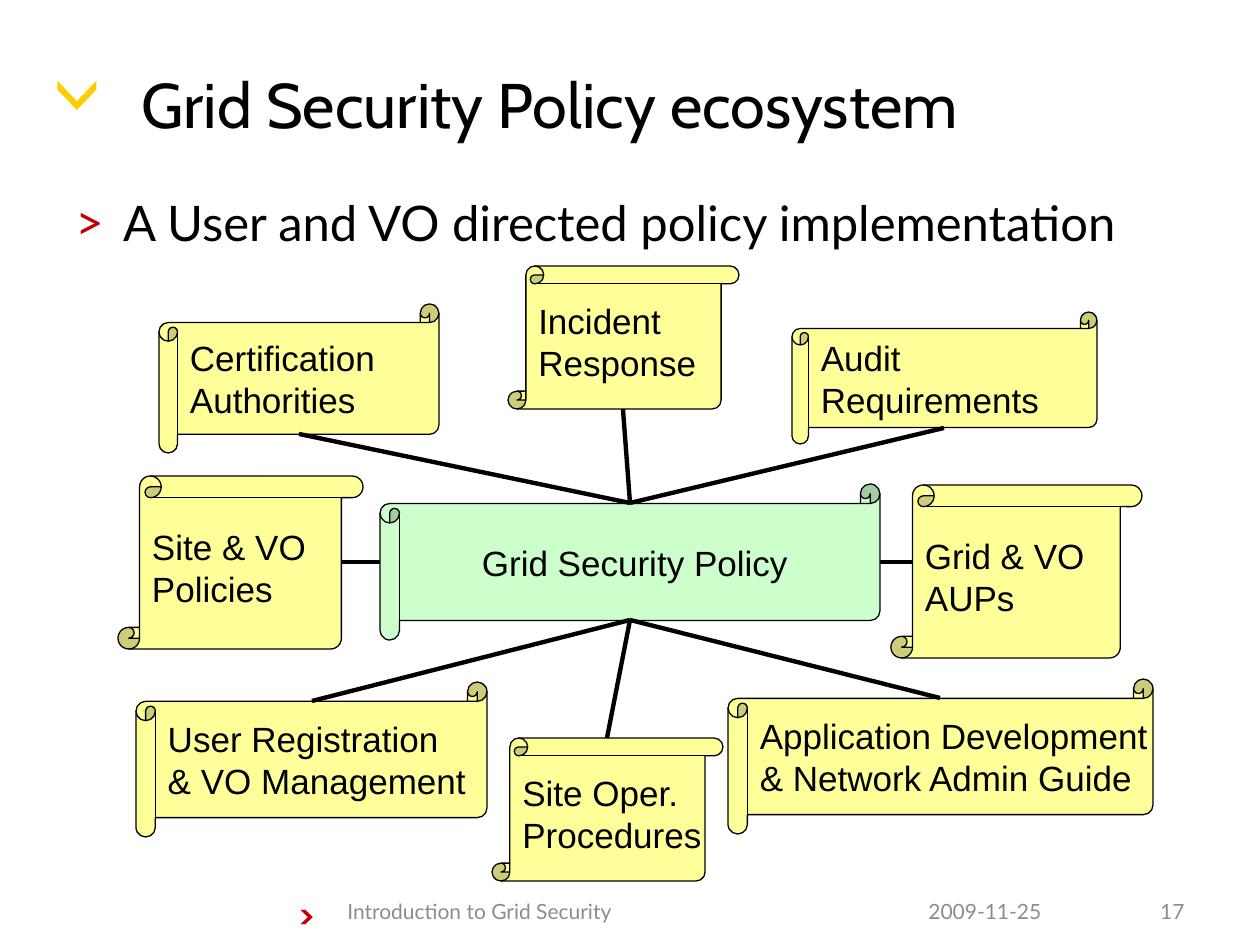
from lxml import etree
from pptx import Presentation
from pptx import util as u
from pptx.dml.color import RGBColor
from pptx.enum import shapes, text
from pptx.oxml import ns

PX = u.Inches(1) / 126
BLACK = RGBColor(0x00, 0x00, 0x00)
RED = RGBColor(0xC0, 0x00, 0x00)
GOLD = RGBColor(0xFF, 0xCC, 0x00)
GREY = RGBColor(0x8C, 0x8C, 0x8C)
GREEN = RGBColor(0xCC, 0xFF, 0xCC)
YELLOW = RGBColor(0xFF, 0xFF, 0x99)
LEFT, CENTER, RIGHT = text.PP_ALIGN.LEFT, text.PP_ALIGN.CENTER, text.PP_ALIGN.RIGHT
TOP, MIDDLE = text.MSO_ANCHOR.TOP, text.MSO_ANCHOR.MIDDLE
HORIZONTAL = shapes.MSO_SHAPE.HORIZONTAL_SCROLL
VERTICAL = shapes.MSO_SHAPE.VERTICAL_SCROLL


def emu(*lengths):
    return [u.Emu(round(length * PX)) for length in lengths]


def write(shape, words, size=20, font="Arial", color=BLACK, bold=False,
          align=LEFT, anchor=MIDDLE, wrap=True, bullet=None):
    frame = shape.text_frame
    frame.text = words
    frame.word_wrap = wrap
    frame.vertical_anchor = anchor
    for paragraph in frame.paragraphs:
        paragraph.alignment = align
        if bullet:
            properties = paragraph._p.get_or_add_pPr()
            properties.set("marL", str(u.Inches(0.38)))
            properties.set("indent", str(-u.Inches(0.38)))
            bullet_color = etree.SubElement(properties, ns.qn("a:buClr"))
            etree.SubElement(bullet_color, ns.qn("a:srgbClr"), val=str(RED))
            etree.SubElement(properties, ns.qn("a:buFont"), typeface=font)
            etree.SubElement(properties, ns.qn("a:buChar"), char=bullet)
        for run in paragraph.runs:
            run.font.size = u.Pt(size)
            run.font.name = font
            run.font.bold = bold
            run.font.color.rgb = color


presentation = Presentation()
presentation.slide_width, presentation.slide_height = emu(1260, 945)
slide = presentation.slides.add_slide(presentation.slide_layouts[5])

# Title
title = slide.shapes.title
title.left, title.top, title.width, title.height = emu(129, 48, 1068, 110)
write(title, "Grid Security Policy ecosystem", size=36, font="Cabin")

# Chevrons beside the title and the footer
chevron = slide.shapes.add_textbox(*emu(58, 29, 59, 127))
chevron.rotation = 90
write(chevron, ">", size=54, font="Cabin", color=GOLD, anchor=TOP)
chevron = slide.shapes.add_textbox(*emu(286, 886, 59, 55))
write(chevron, ">", font="Cabin", color=RED, bold=True, anchor=TOP)

# Bullet line
body = slide.shapes.add_textbox(*emu(63, 186, 1134, 658))
write(body, "A User and VO directed policy implementation",
      size=28, font="Lato", anchor=TOP, bullet=">")

# Footer
for words, left, width, align in [
    ("Introduction to Grid Security", 335, 452, LEFT),
    ("2009-11-25", 916, 147, LEFT),
    ("17", 1131, 66, RIGHT),
]:
    footer = slide.shapes.add_textbox(*emu(left, 896, width, 30))
    write(footer, words, size=12, font="Lato", color=GREY, align=align)

# Scrolls: the central policy and the policies around it
for words, kind, box, fill, align in [
    ("Grid Security Policy", HORIZONTAL, (380, 484, 500, 156), GREEN, CENTER),
    ("Site & VO\nPolicies", VERTICAL, (118, 476, 245, 173), YELLOW, LEFT),
    ("Certification\nAuthorities", HORIZONTAL, (159, 304, 280, 149), YELLOW, LEFT),
    ("Audit\nRequirements", HORIZONTAL, (792, 312, 305, 132), YELLOW, LEFT),
    ("Incident\nResponse", VERTICAL, (508, 266, 231, 143), YELLOW, LEFT),
    ("User Registration\n& VO Management", HORIZONTAL, (136, 682, 351, 155), YELLOW, LEFT),
    ("Application Development\n& Network Admin Guide", HORIZONTAL,
     (728, 679, 425, 155), YELLOW, LEFT),
    ("Grid & VO\nAUPs", VERTICAL, (891, 485, 251, 173), YELLOW, LEFT),
    ("Site Oper.\nProcedures", VERTICAL, (492, 738, 231, 143), YELLOW, LEFT),
]:
    scroll = slide.shapes.add_shape(kind, *emu(*box))
    scroll.shadow.inherit = False
    scroll.fill.solid()
    scroll.fill.fore_color.rgb = fill
    scroll.line.color.rgb = BLACK
    scroll.line.width = u.Pt(0.75)
    write(scroll, words, align=align, wrap=False)

# Lines from the edges of the central policy to the other scrolls
policy_top, policy_bottom = (630, 503), (630, 620)
policy_left, policy_right = (380, 562), (880, 562)
for start, end in [
    (policy_left, (341, 562)),
    (policy_top, (299, 434)),
    (policy_top, (623, 409)),
    (policy_top, (944, 428)),
    (policy_right, (913, 562)),
    (policy_bottom, (312, 701)),
    (policy_bottom, (940, 698)),
    (policy_bottom, (607, 738)),
]:
    line = slide.shapes.add_connector(shapes.MSO_CONNECTOR.STRAIGHT, *emu(*start, *end))
    line.line.color.rgb = BLACK
    line.line.width = u.Pt(2.5)
    etree.SubElement(line._element.spPr, ns.qn("a:effectLst"))

presentation.save("out.pptx")
